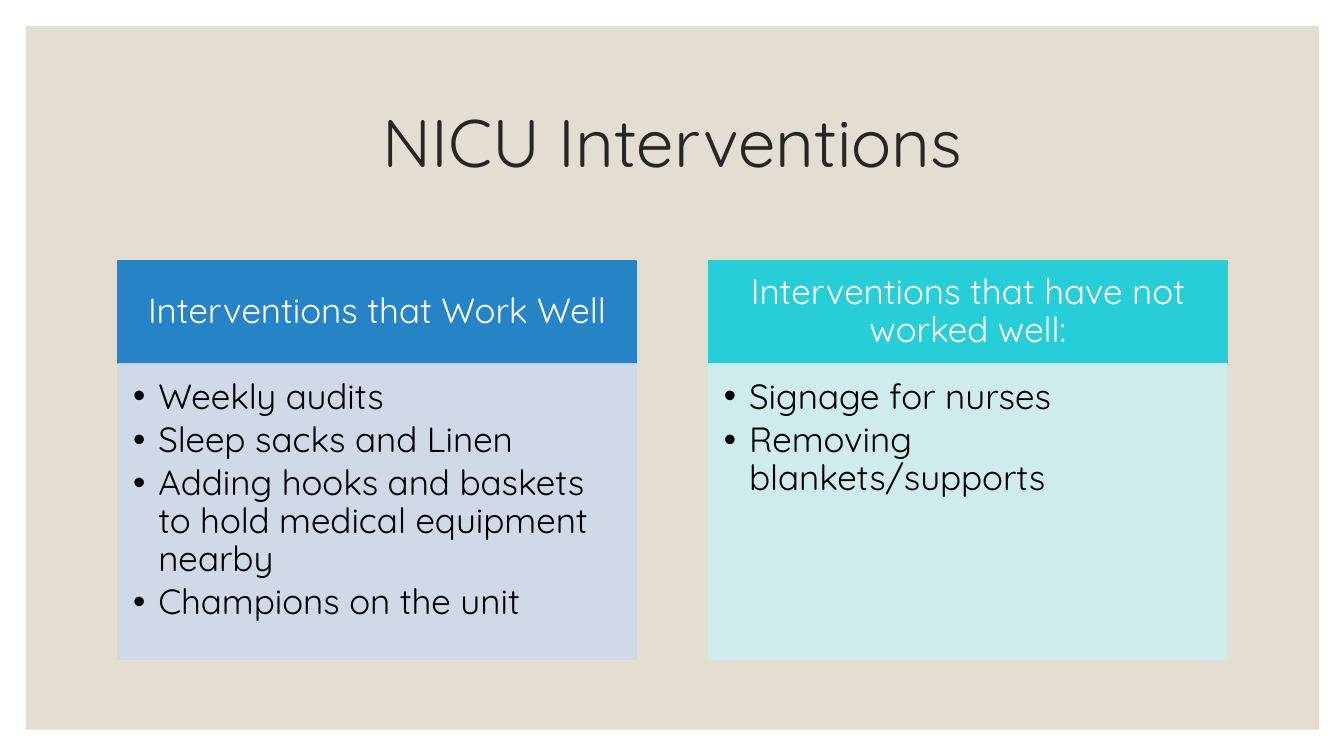
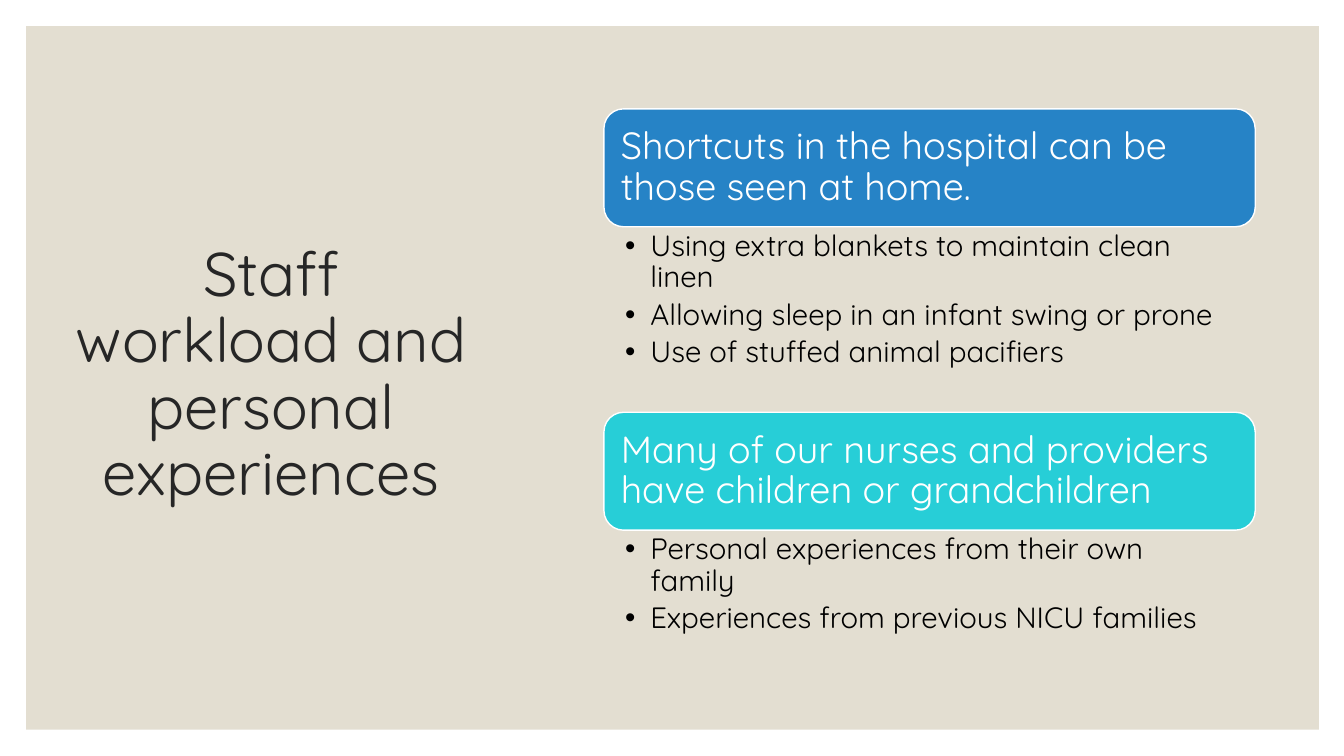
"""Build two slides on sleep interventions and staff experiences."""
import dataclasses

import lxml.etree
import pptx
import pptx.dml.color
import pptx.enum.shapes
import pptx.enum.text
import pptx.oxml.ns
import pptx.util

EMU_PER_PX = 9144
ALIGN = pptx.enum.text.PP_ALIGN
ANCHOR = pptx.enum.text.MSO_ANCHOR
PRESET = pptx.enum.shapes.MSO_SHAPE


@dataclasses.dataclass(frozen=True)
class Theme:
    """Colours, font and type sizes of the presentation."""

    font: str = "Quicksand"
    panel: str = "E3DED1"
    title: str = "262626"
    body: str = "000000"
    white: str = "FFFFFF"
    accents: tuple = ("2683C6", "27CED7")
    tints: tuple = ("CDD9EA", "CDEDF0")
    title_size: int = 48
    side_title_size: int = 44
    column_size: int = 25
    topic_size: int = 27
    detail_size: int = 21


THEME = Theme()


def px(length):
    """Turn px into EMU."""
    return pptx.util.Emu(length * EMU_PER_PX)


def rgb(code):
    """Turn a hex code into a colour."""
    return pptx.dml.color.RGBColor.from_string(code)


def add_box(slide, preset, box, fill, line, opacity=100):
    """Add a filled shape with a thin outline."""
    shape = slide.shapes.add_shape(preset, *map(px, box))
    shape.shadow.inherit = False
    shape.fill.solid()
    shape.fill.fore_color.rgb = rgb(fill)
    shape.line.color.rgb = rgb(line)
    shape.line.width = pptx.util.Pt(1)
    if opacity < 100:
        tag = pptx.oxml.ns.qn("a:alpha")
        for color in shape.element.spPr.iter(pptx.oxml.ns.qn("a:srgbClr")):
            lxml.etree.SubElement(color, tag, val=str(opacity * 1000))
    return shape


def set_bullet(paragraph, indent=25):
    """Give a paragraph a bullet and a hanging indent."""
    properties = paragraph._p.get_or_add_pPr()
    properties.set("marL", str(px(indent)))
    properties.set("indent", str(-px(indent)))
    lxml.etree.SubElement(properties, pptx.oxml.ns.qn("a:buFont"), typeface="Arial")
    lxml.etree.SubElement(properties, pptx.oxml.ns.qn("a:buChar"), char="•")


def write(shape, lines, size, color, insets, align=ALIGN.LEFT,
          anchor=ANCHOR.MIDDLE, bullets=False):
    """Write lines as paragraphs in the shared text style."""
    frame = shape.text_frame
    frame.word_wrap = True
    frame.auto_size = pptx.enum.text.MSO_AUTO_SIZE.NONE
    frame.vertical_anchor = anchor
    (frame.margin_left, frame.margin_top,
     frame.margin_right, frame.margin_bottom) = map(px, insets)
    for index, line in enumerate(lines):
        paragraph = frame.add_paragraph() if index else frame.paragraphs[0]
        paragraph.text = line
        paragraph.alignment = align
        paragraph.line_spacing = 0.9
        if bullets:
            paragraph.space_after = pptx.util.Pt(4)
            set_bullet(paragraph)
        paragraph.font.name = THEME.font
        paragraph.font.size = pptx.util.Pt(size)
        paragraph.font.color.rgb = rgb(color)


def add_titled_slide(deck, layout, title, box, size):
    """Add a slide and place its title."""
    slide = deck.slides.add_slide(layout)
    heading = slide.shapes.title
    heading.left, heading.top, heading.width, heading.height = map(px, box)
    write(heading, [title], size, THEME.title, (10, 5, 10, 5), ALIGN.CENTER)
    return slide


def move_panel_to_layout(slide, layout):
    """Put the shared background panel on the layout."""
    panel = add_box(slide, PRESET.RECTANGLE, (26, 26, 1282, 698),
                    THEME.panel, THEME.panel)
    panel.line.fill.background()
    layout.shapes.element.insert(2, panel.element)


def add_column(slide, box, heading, items, accent, tint):
    """Add a heading band with a tinted bullet list below it."""
    left, top, width, height = box
    band_height = 102
    band = add_box(slide, PRESET.RECTANGLE, (left, top, width, band_height),
                   accent, accent)
    write(band, [heading], THEME.column_size, THEME.white, (19, 11, 19, 11),
          ALIGN.CENTER)
    listing = add_box(slide, PRESET.RECTANGLE,
                      (left, top + band_height, width, height - band_height),
                      tint, tint, opacity=90)
    write(listing, items, THEME.column_size, THEME.body, (15, 15, 19, 22),
          anchor=ANCHOR.TOP, bullets=True)


def add_topic(slide, box, heading, items, accent):
    """Add a rounded heading with a plain bullet list below it."""
    left, top, width, height = box
    banner_height = 117
    banner = add_box(slide, PRESET.ROUNDED_RECTANGLE,
                     (left, top, width, banner_height), accent, THEME.white)
    write(banner, [heading], THEME.topic_size, THEME.white, (11, 11, 11, 11))
    details = slide.shapes.add_textbox(
        *map(px, (left, top + banner_height, width, height - banner_height)))
    write(details, items, THEME.detail_size, THEME.body, (21, 4, 21, 4),
          anchor=ANCHOR.TOP, bullets=True)


def build_interventions(deck, layout):
    """Build the slide that compares interventions in two columns."""
    slide = add_titled_slide(deck, layout, "NICU Interventions",
                             (117, 70, 1100, 150), THEME.title_size)
    columns = (
        ("Interventions that Work Well",
         ["Weekly audits", "Sleep sacks and Linen",
          "Adding hooks and baskets to hold medical equipment nearby",
          "Champions on the unit"]),
        ("Interventions that have not worked well:",
         ["Signage for nurses", "Removing blankets/supports"]),
    )
    left, top, width, height, gap = 117, 259, 514, 395, 72
    for index, (heading, items) in enumerate(columns):
        add_column(slide, (left + index * (width + gap), top, width, height),
                   heading, items, THEME.accents[index], THEME.tints[index])
    return slide


def build_experiences(deck, layout):
    """Build the slide with a side title and stacked topics."""
    slide = add_titled_slide(deck, layout,
                             "Staff workload and personal experiences",
                             (63, 61, 412, 624), THEME.side_title_size)
    topics = (
        ("Shortcuts in the hospital can be those seen at home.",
         ["Using extra blankets to maintain clean linen",
          "Allowing sleep in an infant swing or prone",
          "Use of stuffed animal pacifiers"], 301),
        ("Many of our nurses and providers have children or grandchildren",
         ["Personal experiences from their own family",
          "Experiences from previous NICU families"], 230),
    )
    top = 108
    for (heading, items, height), accent in zip(topics, THEME.accents):
        add_topic(slide, (599, top, 646, height), heading, items, accent)
        top += height
    return slide


def main():
    """Build and save the presentation."""
    deck = pptx.Presentation()
    deck.slide_width, deck.slide_height = px(1333), px(750)
    layout = deck.slide_layouts.get_by_name("Title Only")
    interventions = build_interventions(deck, layout)
    move_panel_to_layout(interventions, layout)
    build_experiences(deck, layout)
    deck.save("out.pptx")


if __name__ == "__main__":
    main()
